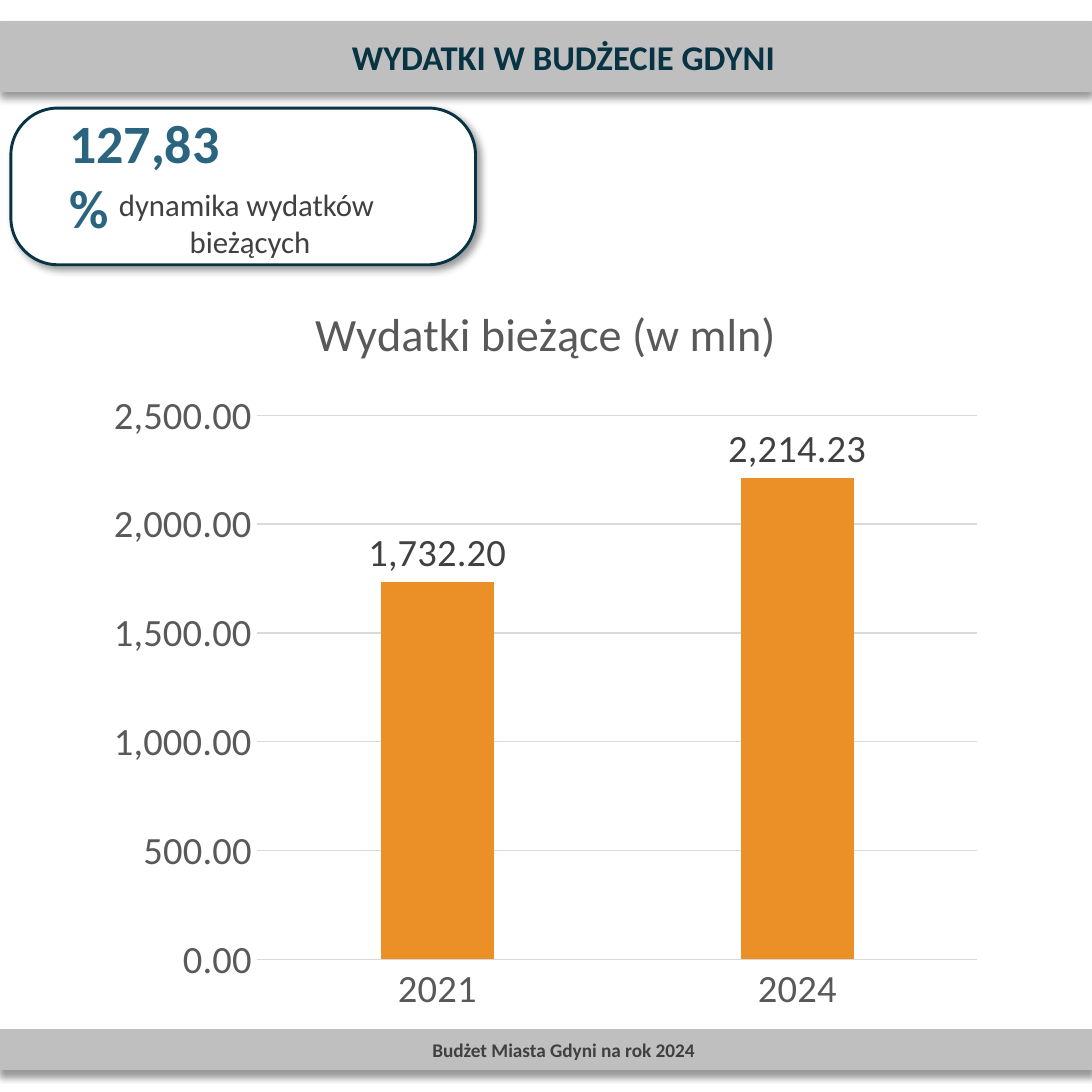
from dataclasses import dataclass

from lxml import etree
from pptx import Presentation
from pptx import util as u
from pptx.chart.data import CategoryChartData
from pptx.dml.color import RGBColor
from pptx.enum import chart as charts, shapes, text
from pptx.oxml import parse_xml
from pptx.oxml.ns import nsdecls


@dataclass(frozen=True)
class Theme:
    font: str = "Calibri"
    white: str = "FFFFFF"
    band: str = "BFBFBF"
    navy: str = "083343"
    teal: str = "2B647F"
    dark: str = "404040"
    axis: str = "595959"
    grid: str = "D9D9D9"
    bar: str = "EA9027"
    footer_size: int = 10
    body_size: int = 16
    header_size: int = 18
    chart_size: int = 20
    title_size: int = 24
    figure_size: int = 28


theme = Theme()


def style_font(font, size, color, bold=False):
    values = {"name": theme.font, "size": u.Pt(size), "bold": bold}
    for name, value in values.items():
        setattr(font, name, value)
    font.color.rgb = RGBColor.from_string(color)


def add_panel(parent, kind, bounds, fill, line, width, angle):
    panel = parent.add_shape(kind, *[u.Cm(value) for value in bounds])
    panel.fill.solid()
    panel.fill.fore_color.rgb = RGBColor.from_string(fill)
    panel.line.color.rgb = RGBColor.from_string(line)
    panel.line.width = u.Pt(width)
    panel.shadow.inherit = False
    effects = panel._element.spPr.find("{*}effectLst")
    effects.append(parse_xml(
        f'<a:outerShdw {nsdecls("a")} blurRad="{u.Pt(4)}" dist="{u.Pt(3)}" '
        f'dir="{angle * 60000}" algn="t" rotWithShape="0">'
        '<a:srgbClr val="000000"><a:alpha val="40000"/></a:srgbClr></a:outerShdw>'))
    return panel


deck = Presentation()
deck.slide_width = deck.slide_height = u.Cm(20)
page = deck.slides.add_slide(deck.slide_layouts[6])

bands = [
    (18.87, 0.71, "Budżet Miasta Gdyni na rok 2024", theme.footer_size, theme.dark),
    (0.4, 1.27, "WYDATKI W BUDŻECIE GDYNI", theme.header_size, theme.navy),
]
for top, height, wording, size, color in bands:
    band = add_panel(page.shapes, shapes.MSO_SHAPE.RECTANGLE,
                     (0, top, 20, height), theme.band, theme.band, 1, 90)
    frame = band.text_frame
    frame.margin_left = u.Cm(0.89)
    frame.vertical_anchor = text.MSO_ANCHOR.MIDDLE
    para = frame.paragraphs[0]
    para.alignment = text.PP_ALIGN.CENTER
    span = para.add_run()
    span.text = wording
    style_font(span.font, size, color, True)

card = page.shapes.add_group_shape()
panel = add_panel(card.shapes, shapes.MSO_SHAPE.ROUNDED_RECTANGLE,
                  (0.2, 1.98, 8.51, 2.87), theme.white, theme.navy, 1.5, 45)
panel.adjustments[0] = 0.3

card_texts = [
    ((1.02, 1.88, 3.76, 1.45), ["127,83 %"],
     theme.figure_size, theme.teal, True, text.PP_ALIGN.LEFT),
    ((0.2, 3.28, 8.76, 1.4), ["dynamika wydatków ", "bieżących"],
     theme.body_size, theme.dark, False, text.PP_ALIGN.CENTER),
]
for bounds, lines, size, color, bold, alignment in card_texts:
    box = card.shapes.add_textbox(*[u.Cm(value) for value in bounds])
    frame = box.text_frame
    frame.word_wrap = True
    for index, line in enumerate(lines):
        para = frame.add_paragraph() if index else frame.paragraphs[0]
        para.alignment = alignment
        span = para.add_run()
        span.text = line
        style_font(span.font, size, color, bold)

spending = CategoryChartData(number_format="#,##0.00")
spending.categories = ["2021", "2024"]
spending.add_series("Wydatki bieżące (w mln)", [1732.20, 2214.23])
chart = page.shapes.add_chart(
    charts.XL_CHART_TYPE.COLUMN_CLUSTERED,
    u.Cm(1.75), u.Cm(4.98), u.Cm(16.48), u.Cm(13.84), spending).chart
style_font(chart.font, theme.chart_size, theme.axis)
chart.has_legend = False
chart.has_title = True
title = chart.chart_title.text_frame
title.text = "Wydatki bieżące (w mln)"
style_font(title.paragraphs[0].runs[0].font, theme.title_size, theme.axis)

plot = chart.plots[0]
plot_values = {"gap_width": 219, "overlap": -27,
               "vary_by_categories": False, "has_data_labels": True}
for name, value in plot_values.items():
    setattr(plot, name, value)
bars = plot.series[0]
bars.format.fill.solid()
bars.format.fill.fore_color.rgb = RGBColor.from_string(theme.bar)
labels = plot.data_labels
label_values = {"show_value": True, "number_format": "#,##0.00",
                "number_format_is_linked": False,
                "position": charts.XL_LABEL_POSITION.OUTSIDE_END}
for name, value in label_values.items():
    setattr(labels, name, value)
style_font(labels.font, theme.chart_size, theme.dark)

years, amounts = chart.category_axis, chart.value_axis
for axis in (years, amounts):
    axis.major_tick_mark = axis.minor_tick_mark = charts.XL_TICK_MARK.NONE
    style_font(axis.tick_labels.font, theme.chart_size, theme.axis)
amount_values = {"minimum_scale": 0, "maximum_scale": 2500,
                 "major_unit": 500, "has_major_gridlines": True}
for name, value in amount_values.items():
    setattr(amounts, name, value)
amounts.tick_labels.number_format = "#,##0.00"
amounts.tick_labels.number_format_is_linked = False
amounts.format.line.fill.background()
for line in (years.format.line, amounts.major_gridlines.format.line):
    line.color.rgb = RGBColor.from_string(theme.grid)
    line.width = u.Pt(0.75)

plot_area = chart._chartSpace.chart.plotArea
for old in plot_area.findall("{*}layout"):
    plot_area.remove(old)
layout = parse_xml(f'<c:layout {nsdecls("c")}><c:manualLayout/></c:layout>')
layout_values = {"layoutTarget": "inner", "xMode": "edge", "yMode": "edge",
                 "x": 0.18, "y": 0.19, "w": 0.8, "h": 0.72}
for name, value in layout_values.items():
    etree.SubElement(layout[0], f"{{{layout.nsmap['c']}}}{name}", val=str(value))
plot_area.insert(0, layout)

deck.save("out.pptx")
